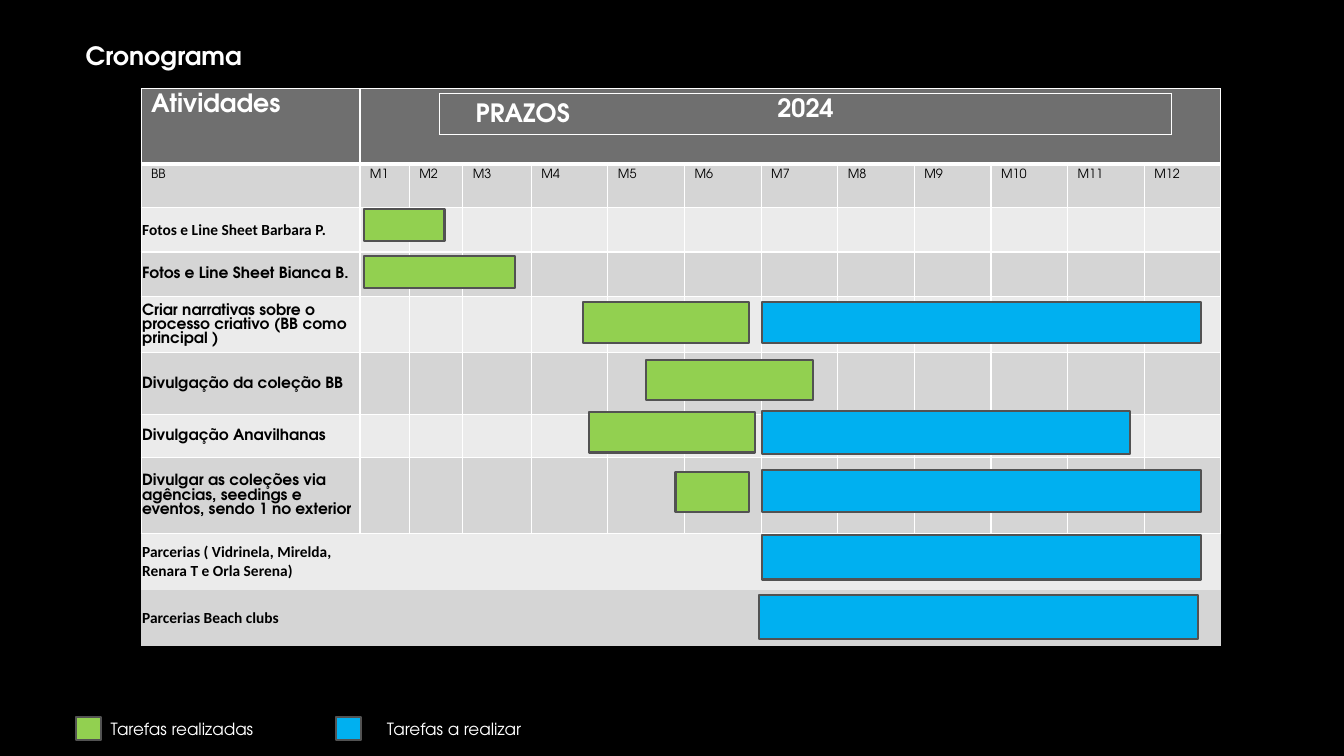
from lxml import etree
from pptx import Presentation
from pptx.dml.color import RGBColor
from pptx.enum.shapes import MSO_SHAPE as Shape
from pptx.enum.text import MSO_ANCHOR as Anchor, PP_ALIGN as Align
from pptx.oxml.ns import qn
from pptx.util import Inches, Pt

ADVENTOR, CALIBRI = "TeX Gyre Adventor", "Calibri"
WHITE, BLACK, HEADER = "FFFFFF", "000000", "6F6F6F"
DARK_BAND, LIGHT_BAND = "D5D5D5", "EBEBEB"
DONE, TO_DO, BAR_EDGE = "92D050", "00B0F0", "525252"
PLAIN_TABLE_STYLE = "{2D5ABB26-0587-4C30-8999-92F81FD0307C}"

MONTH_WIDTHS = [0.49, 0.53, 0.68] + [0.76] * 9
# activity, font, row height
ACTIVITIES = [
    ("Fotos e Line Sheet Barbara P.", CALIBRI, 0.44),
    ("Fotos e Line Sheet Bianca B.", ADVENTOR, 0.44),
    ("Criar narrativas sobre o processo criativo (BB como principal )", ADVENTOR, 0.56),
    ("Divulgação da coleção BB", ADVENTOR, 0.61),
    ("Divulgação Anavilhanas", ADVENTOR, 0.43),
    ("Divulgar as coleções via agências, seedings e eventos, sendo 1 no exterior",
     ADVENTOR, 0.75),
    ("Parcerias ( Vidrinela, Mirelda, Renara T e Orla Serena)", CALIBRI, 0.56),
    ("Parcerias Beach clubs", CALIBRI, 0.56),
]
UNRULED_ROWS = 2
# left, top, width, height from the corner of the schedule
BARS = [
    (2.21, 1.19, 0.8, 0.32, DONE),
    (2.21, 1.66, 1.5, 0.32, DONE),
    (4.38, 2.12, 1.65, 0.4, DONE),
    (6.16, 2.12, 4.35, 0.4, TO_DO),
    (5.01, 2.69, 1.65, 0.4, DONE),
    (4.44, 3.21, 1.65, 0.4, DONE),
    (6.16, 3.2, 3.65, 0.42, TO_DO),
    (5.3, 3.8, 0.73, 0.4, DONE),
    (6.16, 3.78, 4.35, 0.42, TO_DO),
    (6.16, 4.43, 4.35, 0.44, TO_DO),
    (6.13, 5.02, 4.35, 0.44, TO_DO),
]


def color(hex_string):
    return RGBColor.from_string(hex_string)


def write(frame, text, size, hue=WHITE, font=ADVENTOR, bold=False, align=Align.LEFT):
    frame.text = text
    paragraph = frame.paragraphs[0]
    paragraph.alignment = align
    style = paragraph.runs[0].font
    style.name, style.size, style.bold = font, Pt(size), bold
    style.color.rgb = color(hue)


def add_label(slide, left, top, width, height, text, size, bold=False):
    label = slide.shapes.add_textbox(Inches(left), Inches(top), Inches(width), Inches(height))
    label.text_frame.word_wrap = True
    write(label.text_frame, text, size, bold=bold)


def add_bar(slide, left, top, width, height, fill):
    bar = slide.shapes.add_shape(Shape.RECTANGLE, Inches(left), Inches(top),
                                 Inches(width), Inches(height))
    bar.shadow.inherit = False
    bar.fill.solid()
    bar.fill.fore_color.rgb = color(fill)
    bar.line.color.rgb = color(BAR_EDGE)
    bar.line.width = Pt(1.5)


def add_plain_table(slide, left, top, widths, heights):
    table = slide.shapes.add_table(len(heights), len(widths), Inches(left), Inches(top),
                                   Inches(sum(widths)), Inches(sum(heights))).table
    table._tbl.tblPr.find(qn("a:tableStyleId")).text = PLAIN_TABLE_STYLE
    for column, width in zip(table.columns, widths):
        column.width = Inches(width)
    for row, height in zip(table.rows, heights):
        row.height = Inches(height)
    return table


def rule_cell(cell, widths):
    """Draw white borders; widths maps a side (L, R, T, B) to points."""
    properties = cell._tc.get_or_add_tcPr()
    for position, side in enumerate(s for s in "LRTB" if s in widths):
        border = etree.Element(qn(f"a:ln{side}"), w=str(Pt(widths[side])))
        fill = etree.SubElement(border, qn("a:solidFill"))
        etree.SubElement(fill, qn("a:srgbClr"), val=WHITE)
        properties.insert(position, border)


def add_title(slide, left, top, width, height):
    title = slide.shapes.title
    title.left, title.top = Inches(left), Inches(top)
    title.width, title.height = Inches(width), Inches(height)
    title.text_frame.vertical_anchor = Anchor.TOP
    write(title.text_frame, "Cronograma", 18, bold=True)


def style_grid(table):
    last_ruled = len(table.rows) - UNRULED_ROWS - 1
    for index, row in enumerate(table.rows):
        band = HEADER if index == 0 else DARK_BAND if index % 2 else LIGHT_BAND
        sides = dict.fromkeys("LRTB", 1)
        if index == 0:
            sides["B"] = 3
        elif index == 1:
            sides["T"] = 3
        elif index == last_ruled:
            del sides["B"]
        for cell in row.cells:
            cell.fill.solid()
            cell.fill.fore_color.rgb = color(band)
            if index <= last_ruled:
                rule_cell(cell, sides)


def add_schedule(slide, left, top):
    heights = [0.75, 0.43] + [height for _, _, height in ACTIVITIES]
    table = add_plain_table(slide, left, top, [2.17] + MONTH_WIDTHS, heights)
    style_grid(table)
    table.cell(0, 1).merge(table.cell(0, len(MONTH_WIDTHS)))
    write(table.cell(0, 0).text_frame, "Atividades", 18, bold=True)

    months = [f"M{number}" for number in range(1, len(MONTH_WIDTHS) + 1)]
    for column, heading in enumerate(["BB"] + months):
        write(table.cell(1, column).text_frame, heading, 9, BLACK)

    for row, (activity, font, _) in enumerate(ACTIVITIES, start=2):
        cell = table.cell(row, 0)
        cell.vertical_anchor = Anchor.MIDDLE
        cell.margin_left = cell.margin_right = cell.margin_top = Inches(0.01)
        cell.margin_bottom = 0
        write(cell.text_frame, activity, 11, BLACK, font, bold=True)

    add_label(slide, left + 3.22, top + 0.04, 2.81, 0.4, "PRAZOS", 18, bold=True)
    year = add_plain_table(slide, left + 2.96, top + 0.05, [7.26], [0.4]).cell(0, 0)
    rule_cell(year, dict.fromkeys("LRTB", 1))
    write(year.text_frame, "2024", 18, bold=True, align=Align.CENTER)

    for x, y, width, height, fill in BARS:
        add_bar(slide, left + x, top + y, width, height, fill)


def add_legend(slide, left, top):
    entries = [(0, 0.25, "Tarefas realizadas", DONE), (2.58, 0.41, "Tarefas a realizar", TO_DO)]
    for x, label_gap, meaning, fill in entries:
        add_bar(slide, left + x, top, 0.25, 0.23, fill)
        add_label(slide, left + x + label_gap, top - 0.03, 2.17, 0.3, meaning, 12)


def main():
    deck = Presentation()
    deck.slide_width, deck.slide_height = Inches(13.33), Inches(7.5)
    slide = deck.slides.add_slide(deck.slide_layouts[5])
    slide.background.fill.solid()
    slide.background.fill.fore_color.rgb = color(BLACK)
    add_title(slide, 0.75, 0.35, 9.17, 0.4)
    add_schedule(slide, 1.4, 0.88)
    add_legend(slide, 0.75, 7.11)
    deck.save("out.pptx")


if __name__ == "__main__":
    main()
